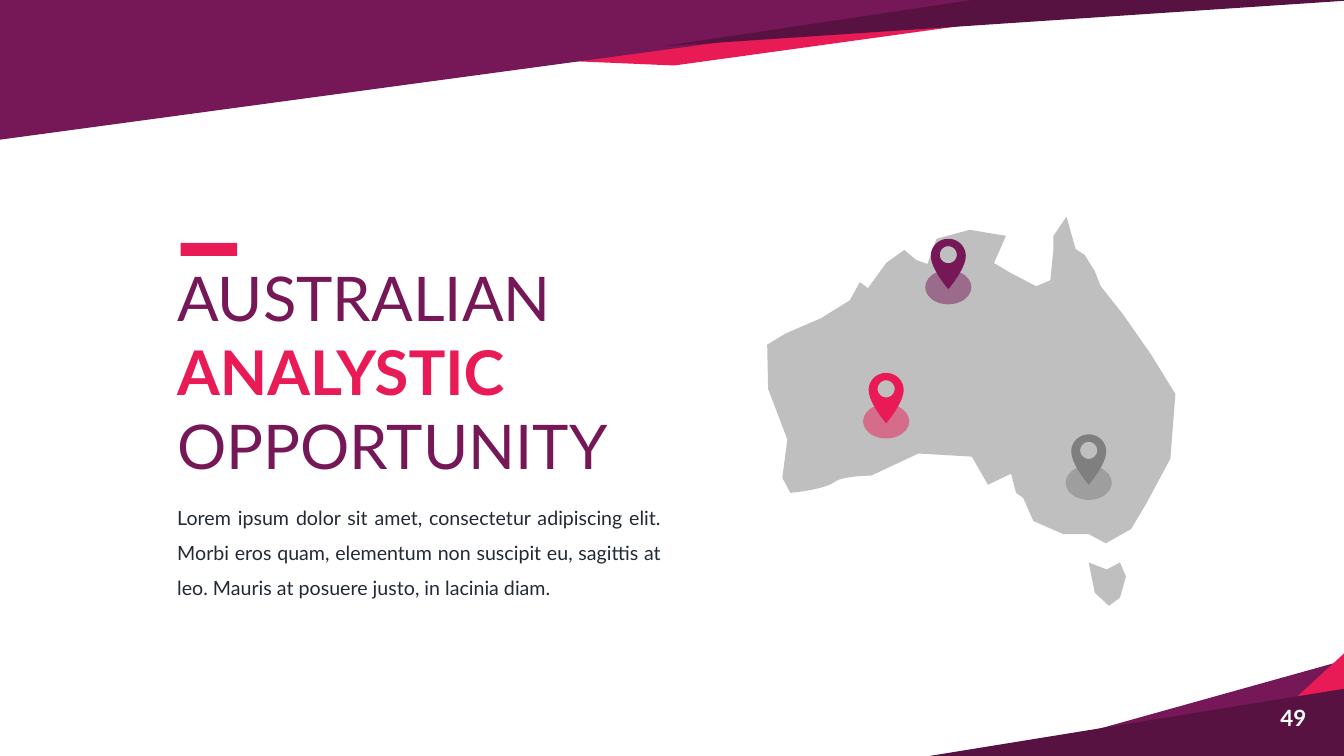
from math import cos, pi, sin

from lxml.etree import SubElement
from pptx import Presentation
from pptx.dml.color import RGBColor
from pptx.enum.shapes import MSO_SHAPE
from pptx.enum.text import MSO_AUTO_SIZE, PP_ALIGN
from pptx.oxml.ns import qn
from pptx.util import Pt

PURPLE = RGBColor(0x76, 0x18, 0x57)
PLUM = RGBColor(0x58, 0x12, 0x41)
PINK = RGBColor(0xE9, 0x1B, 0x56)
LAND = RGBColor(0xBF, 0xBF, 0xBF)
GREY = RGBColor(0x7F, 0x7F, 0x7F)
INK = RGBColor(0x22, 0x2A, 0x35)
WHITE = RGBColor(0xFF, 0xFF, 0xFF)
FONT = "Lato"

HEADER_WEDGES = [
    (PINK, [(763.2, 7.9), (329, 40.3), (481.7, 46.8)]),
    (PURPLE, [(769.7, -4.3), (-2.2, 100.1), (-2.2, -5.8)]),
    (PLUM, [(799.9, -15.8), (473, 33.1), (979.2, -0.7)]),
]
FOOTER_WEDGES = [
    (PURPLE, [(305.5, 30.2), (91.7, 89.9), (327.8, 62.6)]),
    (PINK, [(360.2, 83.4), (175.2, 141.8), (320.6, 7.8), (383.3, 46)]),
    (PLUM, [(368.2, 103.6), (3.8, 100), (301.2, 51.8)]),
]
NORTH_AND_WEST_COAST = [
    (170.6, 13.7), (144.7, 9.4), (121, 15.8), (114.5, 33.8), (106.6, 31),
    (97.9, 23.8), (85, 33.1), (72, 51.1), (66.2, 46.8), (59, 59.8),
    (38.2, 72.7), (13, 83.5), (0, 91.4), (0.7, 123.1), (14.4, 159.1),
    (10.8, 186.5), (16.6, 197.3),
]
BIGHT_CURVES = [
    [(16.6, 197.3), (16.6, 197.3), (41, 195.1), (48.2, 189.4)],
    [(48.2, 189.4), (54.7, 185), (74.2, 185), (74.2, 185)],
]
SOUTH_AND_EAST_COAST = [
    (108, 169.2), (146.2, 171.4), (157.7, 191.5), (174.2, 183.6),
    (177.8, 197.3), (182.9, 200.9), (190.1, 217.4), (211.7, 226.8),
    (229.7, 226.8), (241.9, 233.3), (259.9, 223.2), (270.7, 205.2),
    (288, 172.8), (291.6, 126.7), (274.3, 98.6), (254.2, 69.8),
    (238.3, 49.7), (234, 38.9), (226.8, 27.4), (220.3, 23), (213.8, 0),
    (204.5, 13.7), (204.5, 23), (202.3, 45.4), (192.2, 49.7),
    (172.8, 39.6), (162, 33.1),
]
TASMANIA = [
    (229.7, 247), (242.6, 252), (252, 247), (256.3, 257),
    (252, 272.2), (244.1, 277.9), (234, 268.6),
]
PINS = [(PURPLE, 129.4, 51.8), (PINK, 85, 147.6), (GREY, 229.7, 191.5)]


def curve_points(start, first, second, end, steps=12):
    points = []
    for step in range(1, steps + 1):
        t = step / steps
        weights = ((1 - t) ** 3, 3 * t * (1 - t) ** 2, 3 * t * t * (1 - t), t ** 3)
        corners = (start, first, second, end)
        points.append(tuple(sum(w * c[axis] for w, c in zip(weights, corners))
                            for axis in (0, 1)))
    return points


def paint(shape, colour):
    shape.shadow.inherit = False
    shape.fill.solid()
    shape.fill.fore_color.rgb = colour
    shape.line.fill.background()


def add_outline(page, left, top, colour, *rings):
    builder = None
    for ring in rings:
        points = [(Pt(x), Pt(y)) for x, y in ring]
        if builder is None:
            builder = page.shapes.build_freeform(*points[0])
        else:
            builder.move_to(*points[0])
        builder.add_line_segments(points[1:], close=True)
    paint(builder.convert_to_shape(Pt(left), Pt(top)), colour)


def add_text(page, box, lines, size, wrap=True):
    frame = page.shapes.add_textbox(*map(Pt, box)).text_frame
    frame.word_wrap = wrap
    frame.auto_size = MSO_AUTO_SIZE.SHAPE_TO_FIT_TEXT
    frame.text = "\n".join(text for text, _, _ in lines)
    for para, (_, colour, bold) in zip(frame.paragraphs, lines):
        font = para.runs[0].font
        font.name = FONT
        font.size = Pt(size)
        font.color.rgb = colour
        font.bold = bold
    return frame.paragraphs[0]


def add_wedges(page, left, top, wedges):
    for colour, points in wedges:
        add_outline(page, left, top, colour, points)


def add_footer(page, left, top):
    add_wedges(page, left, top, FOOTER_WEDGES)
    number = add_text(page, (left + 246.5, top + 59.7, 34.6, 26.6),
                      [("49", WHITE, True)], 16, wrap=False)
    number.alignment = PP_ALIGN.CENTER


def add_message(page, left, top):
    add_text(page, (left, top + 8.6, 358.6, 167), [
        ("AUSTRALIAN", PURPLE, False),
        ("ANALYSTIC", PINK, True),
        ("OPPORTUNITY", PURPLE, False),
    ], 44)
    accent = page.shapes.add_shape(
        MSO_SHAPE.RECTANGLE, Pt(left + 9.6), Pt(top), Pt(40.3), Pt(9.2))
    paint(accent, PINK)
    body = add_text(page, (left, top + 175.7, 360, 80), [(
        "Lorem ipsum dolor sit amet, consectetur adipiscing elit. Morbi eros quam, "
        "elementum non suscipit eu, sagittis at leo. Mauris at posuere justo, "
        "in lacinia diam.", INK, False)], 14)
    body.alignment = PP_ALIGN.JUSTIFY
    body.line_spacing = 1.5


def add_pin(page, tip_left, tip_top, colour):
    halo = page.shapes.add_shape(MSO_SHAPE.OVAL, Pt(tip_left - 16.5),
                                 Pt(tip_top - 13.7), Pt(33), Pt(24.5))
    paint(halo, colour)
    tint = halo.fill._xPr.find(qn("a:solidFill"))[0]
    SubElement(tint, qn("a:alpha")).set("val", "50000")

    left_side = (curve_points((0, -36), (-6.8, -36), (-12.5, -30.7), (-12.5, -23.8))
                 + curve_points((-12.5, -23.8), (-12.5, -14.4), (0, 0), (0, 0)))
    right_side = [(-x, y) for x, y in reversed(left_side[:-1])]
    angles = [2 * pi * step / 36 for step in range(36)]
    hole = [(6.1 * cos(angle), 6.1 * sin(angle) - 24.6) for angle in angles]
    add_outline(page, tip_left, tip_top, colour,
                [(0, -36)] + left_side + right_side, hole)


def add_map(page, left, top):
    bight = [point for curve in BIGHT_CURVES for point in curve_points(*curve)]
    add_outline(page, left, top, LAND,
                NORTH_AND_WEST_COAST + bight + SOUTH_AND_EAST_COAST)
    add_outline(page, left, top, LAND, TASMANIA)
    for colour, tip_left, tip_top in PINS:
        add_pin(page, left + tip_left, top + tip_top, colour)


def main():
    deck = Presentation()
    deck.slide_width, deck.slide_height = Pt(960), Pt(540)
    page = deck.slides.add_slide(deck.slide_layouts[6])
    add_footer(page, 660, 440)
    add_wedges(page, 0, 0, HEADER_WEDGES)
    add_message(page, 119.5, 173.5)
    add_map(page, 548, 154.8)
    deck.save("out.pptx")


if __name__ == "__main__":
    main()
